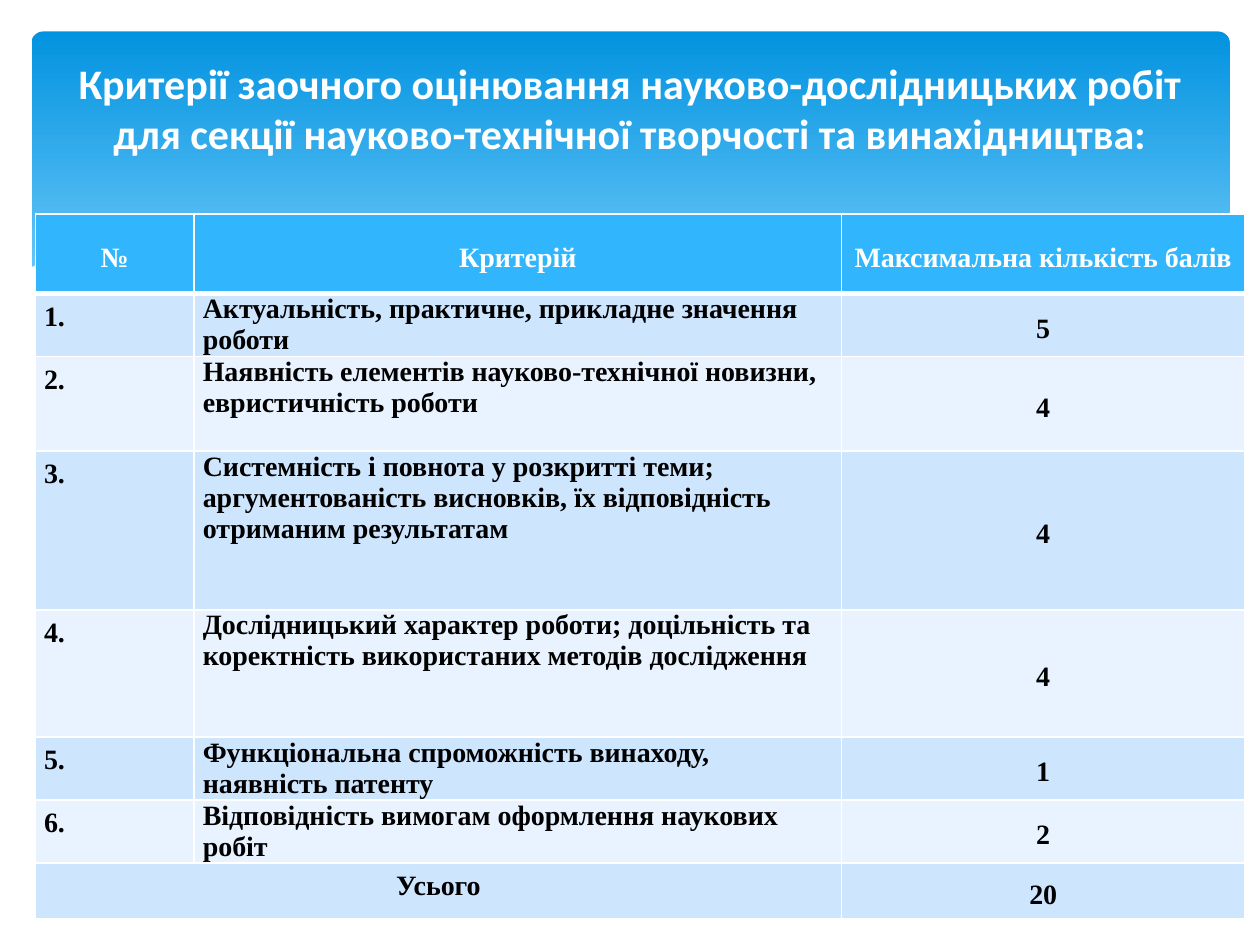
"""Builds a slide with the criteria table for assessing research papers."""
from lxml import etree
from pptx import Presentation
from pptx import util as u
from pptx.dml.color import RGBColor
from pptx.enum import shapes, text
from pptx.oxml import ns


def color(value):
    return RGBColor.from_string(value)


def add_run(paragraph, content, font, size, value):
    run = paragraph.add_run()
    run.text = content
    run.font.name = font
    run.font.size = u.Pt(size)
    run.font.bold = True
    run.font.color.rgb = color(value)


presentation = Presentation()
presentation.slide_width = u.Inches(10)
presentation.slide_height = u.Inches(7.5)
slide = presentation.slides.add_slide(presentation.slide_layouts[6])

banner = slide.shapes.add_shape(
    shapes.MSO_SHAPE.ROUNDED_RECTANGLE,
    u.Inches(0.25), u.Inches(0.25), u.Inches(9.51), u.Inches(2.7))
banner.adjustments[0] = 0.034
banner.shadow.inherit = False
banner.line.fill.background()
banner.fill.gradient()
banner.fill.gradient_angle = 270
for stop, position, value in zip(banner.fill.gradient_stops, (0, 0.9), ("0293E0", "83D3FE")):
    stop.position = position
    stop.color.rgb = color(value)

wave_points = [
    (0.23, 2.13), (0.36, 2.07), (0.59, 1.99), (0.85, 1.93), (1.19, 1.87), (1.61, 1.84),
    (2.11, 1.84), (2.71, 1.88), (3.4, 1.97), (4.18, 2.13), (5.03, 2.33), (5.79, 2.5),
    (6.48, 2.62), (7.08, 2.7), (7.61, 2.75), (8.09, 2.77), (8.63, 2.74), (9.1, 2.67),
    (9.5, 2.56), (9.77, 2.46), (9.77, 3.29), (0.23, 3.29)]
wave_points = [(u.Inches(x), u.Inches(y)) for x, y in wave_points]
builder = slide.shapes.build_freeform(*wave_points[0])
builder.add_line_segments(wave_points[1:], close=True)
wave = builder.convert_to_shape()
wave.shadow.inherit = False
wave.fill.solid()
wave.fill.fore_color.rgb = color("FFFFFF")
wave.line.fill.background()

rows = [
    ("№", "Критерій", "Максимальна кількість балів"),
    ("1.", "Актуальність, практичне, прикладне значення роботи", "5"),
    ("2.", "Наявність елементів науково-технічної новизни, евристичність роботи", "4"),
    ("3.", "Системність і повнота у розкритті теми; аргументованість висновків, "
           "їх відповідність отриманим результатам", "4"),
    ("4.", "Дослідницький характер роботи; доцільність та коректність "
           "використаних методів дослідження", "4"),
    ("5.", "Функціональна спроможність винаходу, наявність патенту", "1"),
    ("6.", "Відповідність вимогам оформлення наукових робіт", "2"),
    ("Усього", "", "20"),
]
column_widths = [1.26, 5.14, 3.2]
row_heights = [0.63, 0.5, 0.75, 1.26, 1.01, 0.5, 0.5, 0.44]
last = len(rows) - 1
table = slide.shapes.add_table(
    len(rows), len(column_widths), u.Inches(0.28), u.Inches(1.7),
    u.Inches(sum(column_widths)), u.Inches(sum(row_heights))).table
for column, width in zip(table.columns, column_widths):
    column.width = u.Inches(width)
for row, height in zip(table.rows, row_heights):
    row.height = u.Inches(height)
table.cell(last, 0).merge(table.cell(last, 1))

for i, row in enumerate(rows):
    for j, content in enumerate(row):
        cell = table.cell(i, j)
        cell.margin_left = cell.margin_right = u.Inches(0.07)
        cell.margin_top = cell.margin_bottom = 0
        centered = i in (0, last) or j == 2
        cell.vertical_anchor = (
            text.MSO_ANCHOR.MIDDLE if i == 0 or j == 2 else text.MSO_ANCHOR.TOP)

        properties = cell._tc.get_or_add_tcPr()
        for side in "LRTB":
            thick = (i, side) in ((0, "B"), (1, "T"))
            border = etree.SubElement(
                properties, ns.qn("a:ln" + side), w=str(u.Pt(3 if thick else 1)))
            solid = etree.SubElement(border, ns.qn("a:solidFill"))
            etree.SubElement(solid, ns.qn("a:srgbClr"), val="FFFFFF")
        cell.fill.solid()
        cell.fill.fore_color.rgb = color(
            "31B6FD" if i == 0 else "CEE5FE" if i % 2 else "E8F3FF")

        if content:
            paragraph = cell.text_frame.paragraphs[0]
            paragraph.alignment = text.PP_ALIGN.CENTER if centered else text.PP_ALIGN.LEFT
            paragraph.line_spacing = 1.25 if centered or j == 0 else 1.0
            add_run(paragraph, content, "Times New Roman", 16, "000000" if i else "FFFFFF")

title = slide.shapes.add_textbox(u.Inches(0.5), u.Inches(0.37), u.Inches(9), u.Inches(1.37))
frame = title.text_frame
frame.word_wrap = True
frame.vertical_anchor = text.MSO_ANCHOR.MIDDLE
frame.margin_bottom = u.Inches(0.45)
paragraph = frame.paragraphs[0]
paragraph.alignment = text.PP_ALIGN.CENTER
add_run(paragraph, "Критерії заочного оцінювання науково-дослідницьких робіт для секції "
        "науково-технічної творчості та винахідництва:", "Calibri", 24, "FFFFFF")

presentation.save("out.pptx")
